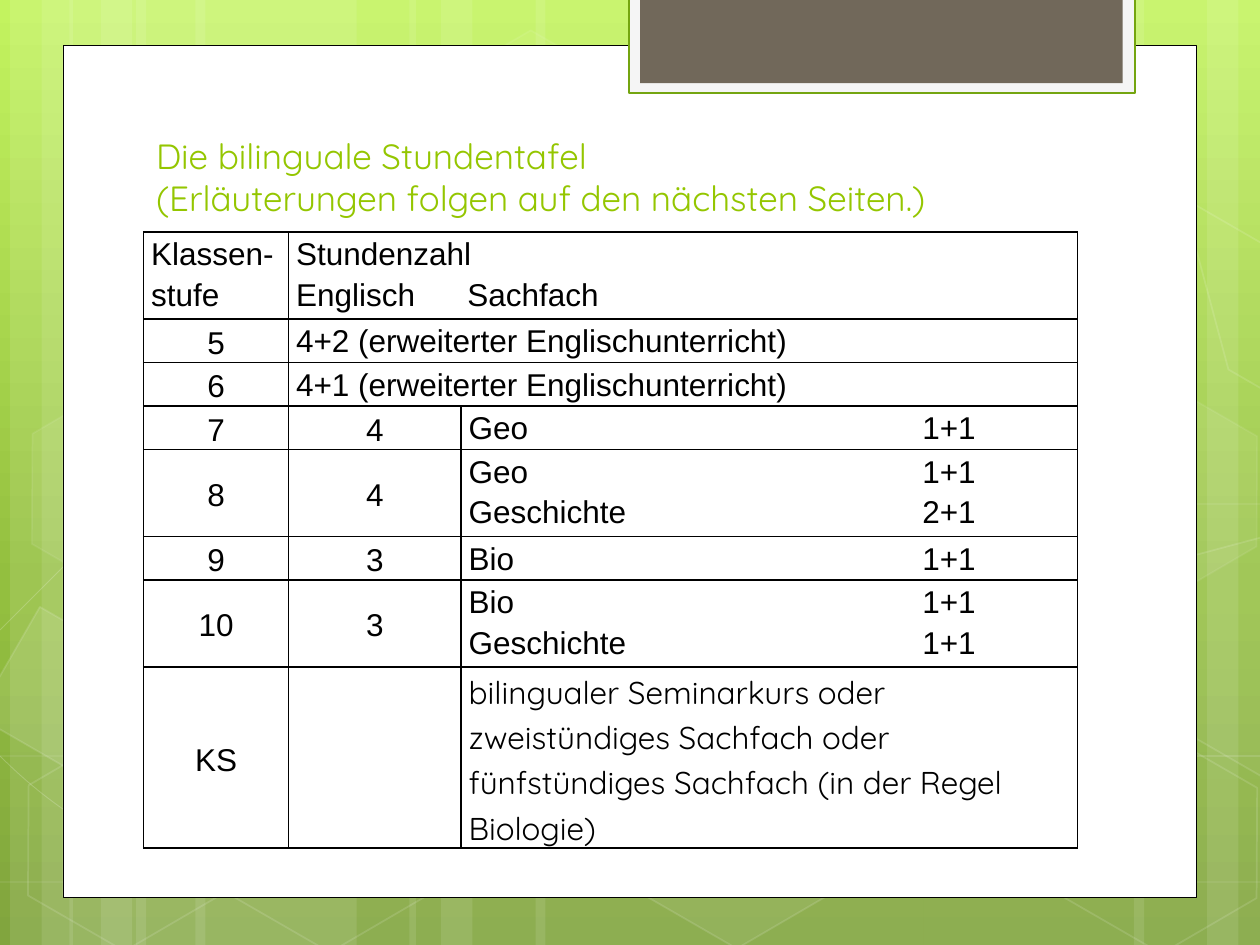
from copy import deepcopy
from math import cos, radians, sin

from pptx import Presentation
from pptx.dml.color import RGBColor
from pptx.enum.shapes import MSO_SHAPE
from pptx.enum.text import MSO_ANCHOR, PP_ALIGN
from pptx.oxml.ns import qn
from pptx.oxml.xmlchemy import OxmlElement
from pptx.util import Inches, Pt

TITLE = "Die bilinguale Stundentafel\v(Erläuterungen folgen auf den nächsten Seiten.)"
ONE_LINE, TWO_LINES, FOUR_LINES = 24.34, 48.68, 103.7  # row heights in points
# Rows with two entries merge the last two columns.
ROWS = [
    (TWO_LINES, ["Klassen-\nstufe", "Stundenzahl\nEnglisch\tSachfach"]),
    (ONE_LINE, ["5", "4+2 (erweiterter Englischunterricht)"]),
    (ONE_LINE, ["6", "4+1 (erweiterter Englischunterricht)"]),
    (ONE_LINE, ["7", "4", "Geo\t1+1"]),
    (TWO_LINES, ["8", "4", "Geo\t1+1\nGeschichte\t2+1"]),
    (ONE_LINE, ["9", "3", "Bio\t1+1"]),
    (TWO_LINES, ["10", "3", "Bio\t1+1\nGeschichte\t1+1"]),
    (FOUR_LINES, ["KS", "", "bilingualer Seminarkurs oder zweistündiges Sachfach oder "
                  "fünfstündiges Sachfach (in der Regel Biologie)"]),
]
COLUMNS = [1.15, 1.37, 4.89]
HEADER_TAB, HOURS_TAB = 1.36, 3.6

BACKGROUND = [(0, "C3F35F"), (0.62, "93BF3F"), (1, "81A53E")]
STRIPES = [  # left, width
    (1.08, 1.75), (0.08, 0.5), (0.33, 0.83), (1.55, 1.75), (0.55, 0.5), (0.8, 0.83),
    (7.33, 1.75), (9.58, 0.5), (9, 0.83), (4.25, 3.08), (3.25, 0.5), (3.5, 0.83),
]
# Start point, then Bezier segments of two control points and an end point.
CURVES = [
    [(0.07, 6.73), (0.61, 6.76), (1.15, 6.79), (1.9, 6.78), (2.65, 6.77), (3.58, 6.75),
     (4.58, 6.65), (5.58, 6.55), (7, 6.36), (7.92, 6.17), (8.83, 5.98), (9.77, 5.68),
     (10.07, 5.51)],
    [(0.07, 4.77), (0.36, 4.61), (0.65, 4.46), (1.21, 4.31), (1.78, 4.16), (2.59, 3.94),
     (3.47, 3.87), (4.36, 3.8), (5.44, 3.79), (6.54, 3.87), (7.64, 3.95), (9.47, 4.26),
     (10.07, 4.34)],
    [(0.06, 6.17), (1.27, 6.72), (2.47, 7.27), (3.34, 7.49)],
    [(0.07, 5.78), (0.38, 5.89), (0.7, 6), (1.28, 6.16), (1.86, 6.31), (2.73, 6.56),
     (3.57, 6.73), (4.4, 6.9), (5.45, 7.08), (6.28, 7.18), (7.11, 7.29), (8, 7.33),
     (8.53, 7.36), (9.05, 7.4), (9.19, 7.38), (9.45, 7.38), (9.71, 7.37), (9.89, 7.35),
     (10.07, 7.34)],
    [(2.42, 7.49), (2.6, 7.29), (2.78, 7.09), (3.02, 6.91), (3.26, 6.73), (3.6, 6.53),
     (3.88, 6.39), (4.16, 6.25), (4.33, 6.19), (4.7, 6.09), (5.06, 5.99), (5.73, 5.85),
     (6.08, 5.78), (6.44, 5.71), (6.49, 5.71), (6.8, 5.69), (7.11, 5.66), (7.6, 5.63),
     (7.94, 5.62), (8.29, 5.61), (8.86, 5.62), (8.86, 5.62), (9.08, 5.62), (9.3, 5.62),
     (9.53, 5.62), (9.71, 5.63), (9.88, 5.64), (9.97, 5.65), (10.06, 5.66),
     (10.03, 5.65), (10.06, 5.66)],
]
HEXAGONS = [  # left, top, fill opacity, line opacity (percent)
    (3.34, 0.36, 4, 8), (4.97, 5.89, 6, 12), (0.11, 5.91, 0, 12),
    (0.14, 3.12, 7, 8), (1.74, 5.92, 0, 12), (7.53, 4.53, 10, 12),
    (8.34, 5.93, 0, 12), (8.34, 3.14, 7, 8),
]
TILT = 30
CUT_HEXAGONS = [  # fill opacity, centre, tilted corners
    (10, (0.36, 5.35), [(0.08, 4.45), (0.19, 4.38), (0.96, 4.82), (0.95, 5.7),
                        (0.2, 6.14), (0.08, 6.07)]),
    (4, (9.85, 5.2), [(9.26, 4.85), (10.01, 4.41), (10.09, 4.46), (10.09, 6.13),
                      (10.02, 6.17), (9.26, 5.73)]),
    (0, (9.85, 2.41), [(9.26, 2.07), (10.01, 1.63), (10.1, 1.68), (10.09, 3.35),
                       (10.02, 3.39), (9.26, 2.95)]),
]
PANELS = [  # box, fill, line colour, line width
    ((0.5, 0.36, 9, 6.76), "FFFFFF", "000000", 0.5),
    ((4.99, -0.02, 4.02, 0.76), "F5F5F5", "74A510", 1.25),
    ((5.08, -0.02, 3.83, 0.68), "71685A", None, 0),
]


def color(value):
    return RGBColor.from_string(value)


def paint(fill, value, opacity=100):
    if not value or not opacity:
        fill.background()
        return
    fill.solid()
    fill.fore_color.rgb = color(value)
    if opacity < 100:
        alpha = OxmlElement("a:alpha")
        alpha.set("val", str(opacity * 1000))
        fill._xPr.find(qn("a:solidFill"))[0].append(alpha)


def style(shape, fill, line, width=1, fill_opacity=100, line_opacity=100):
    shape.shadow.inherit = False
    paint(shape.fill, fill, fill_opacity)
    paint(shape.line.fill, line, line_opacity)
    if line:
        shape.line.width = Pt(width)


def add_preset(page, kind, box):
    return page.shapes.add_shape(kind, *[Inches(v) for v in box])


def add_outline(page, points, close):
    builder = page.shapes.build_freeform(*points[0], scale=Inches(1))
    builder.add_line_segments(points[1:], close=close)
    return builder.convert_to_shape()


def add_curve(page, points):
    """Draw the points as lines, then join every three into a Bezier segment."""
    shape = add_outline(page, points, False)
    lines = list(shape._element.iter(qn("a:lnTo")))
    for i in range(0, len(lines), 3):
        bezier = OxmlElement("a:cubicBezTo")
        lines[i].addprevious(bezier)
        for line in lines[i:i + 3]:
            bezier.append(line[0])
            line.getparent().remove(line)
    return shape


def turn_back(point, centre):
    """Undo the tilt of a point around the centre."""
    x, y = point[0] - centre[0], point[1] - centre[1]
    c, s = cos(radians(TILT)), sin(radians(TILT))
    return centre[0] + x * c + y * s, centre[1] - x * s + y * c


def draw_background(page):
    fill = page.background.fill
    fill.gradient()
    fill.gradient_angle = 270
    stop_list = page._element.find(".//" + qn("a:gsLst"))
    stop_list.append(deepcopy(stop_list[-1]))
    for stop, (position, value) in zip(fill.gradient_stops, BACKGROUND):
        stop.position = position
        stop.color.rgb = color(value)
    for left, width in STRIPES:
        stripe = add_preset(page, MSO_SHAPE.RECTANGLE, (left, 0, width, 7.5))
        style(stripe, "FFFFFF", None, fill_opacity=10)
    for curve in CURVES:
        style(add_curve(page, curve), None, "FFFFFF", 0.5, line_opacity=20)
    for left, top, fill_opacity, line_opacity in HEXAGONS:
        hexagon = add_preset(page, MSO_SHAPE.HEXAGON, (left, top, 1.75, 1.52))
        hexagon.adjustments[0] = 0.285
        hexagon.rotation = TILT
        style(hexagon, "FFFFFF", "FFFFFF", 1, fill_opacity, line_opacity)
    for opacity, centre, corners in CUT_HEXAGONS:
        cut = add_outline(page, [turn_back(corner, centre) for corner in corners], True)
        cut.rotation = TILT
        style(cut, "FFFFFF", "FFFFFF", 1, opacity, 12)
    for box, fill, line, width in PANELS:
        style(add_preset(page, MSO_SHAPE.RECTANGLE, box), fill, line, width)


def format_para(para, font, size, value, spacing):
    para.line_spacing = spacing
    for span in para.runs:
        span.font.name, span.font.size = font, Pt(size)
        span.font.color.rgb = color(value)


def set_tab(para, position):
    tabs = OxmlElement("a:tabLst")
    tab = OxmlElement("a:tab")
    tab.set("pos", str(Inches(position)))
    tab.set("algn", "l")
    tabs.append(tab)
    para._p.get_or_add_pPr().append(tabs)


def add_borders(cell):
    properties = cell._tc.get_or_add_tcPr()
    for index, side in enumerate(("lnL", "lnR", "lnT", "lnB")):
        line = OxmlElement("a:" + side)
        line.set("w", str(Pt(1)))
        fill = OxmlElement("a:solidFill")
        black = OxmlElement("a:srgbClr")
        black.set("val", "000000")
        fill.append(black)
        line.append(fill)
        properties.insert(index, line)


def fill_cell(cell, text, font, centred, tab):
    cell.text_frame.text = text
    cell.margin_left = cell.margin_right = Inches(0.06)
    cell.margin_top = cell.margin_bottom = 0
    cell.vertical_anchor = MSO_ANCHOR.MIDDLE if centred else MSO_ANCHOR.TOP
    for para in cell.text_frame.paragraphs:
        format_para(para, font, 18, "000000", 1.15)
        para.alignment = PP_ALIGN.CENTER if centred else PP_ALIGN.LEFT
        if "\t" in para.text:
            set_tab(para, tab)


def draw_timetable(page):
    box = (Inches(1.14), Inches(1.84), Inches(sum(COLUMNS)), Pt(sum(h for h, _ in ROWS)))
    table = page.shapes.add_table(len(ROWS), len(COLUMNS), *box).table
    table.first_row = table.horz_banding = False
    for column, width in zip(table.columns, COLUMNS):
        column.width = Inches(width)
    for r, (height, texts) in enumerate(ROWS):
        table.rows[r].height = Pt(height)
        for c in range(len(COLUMNS)):
            table.cell(r, c).fill.background()
            add_borders(table.cell(r, c))
        if len(texts) == 2:
            table.cell(r, 1).merge(table.cell(r, 2))
        for c, text in enumerate(texts):
            centred = r > 0 and c < len(texts) - 1
            font = "Quicksand" if text.startswith("bilingual") else "Arial"
            fill_cell(table.cell(r, c), text, font, centred, HOURS_TAB if r else HEADER_TAB)


deck = Presentation()
deck.slide_width, deck.slide_height = Inches(10), Inches(7.5)
page = deck.slides.add_slide(deck.slide_layouts[6])
draw_background(page)
title = page.shapes.add_textbox(Inches(1.14), Inches(1.12), Inches(7.68), Inches(0.66))
title.text_frame.word_wrap = True
title.text_frame.vertical_anchor = MSO_ANCHOR.BOTTOM
heading = title.text_frame.paragraphs[0]
heading.text = TITLE
format_para(heading, "Quicksand", 20, "94C600", 1.0)
draw_timetable(page)
deck.save("out.pptx")
